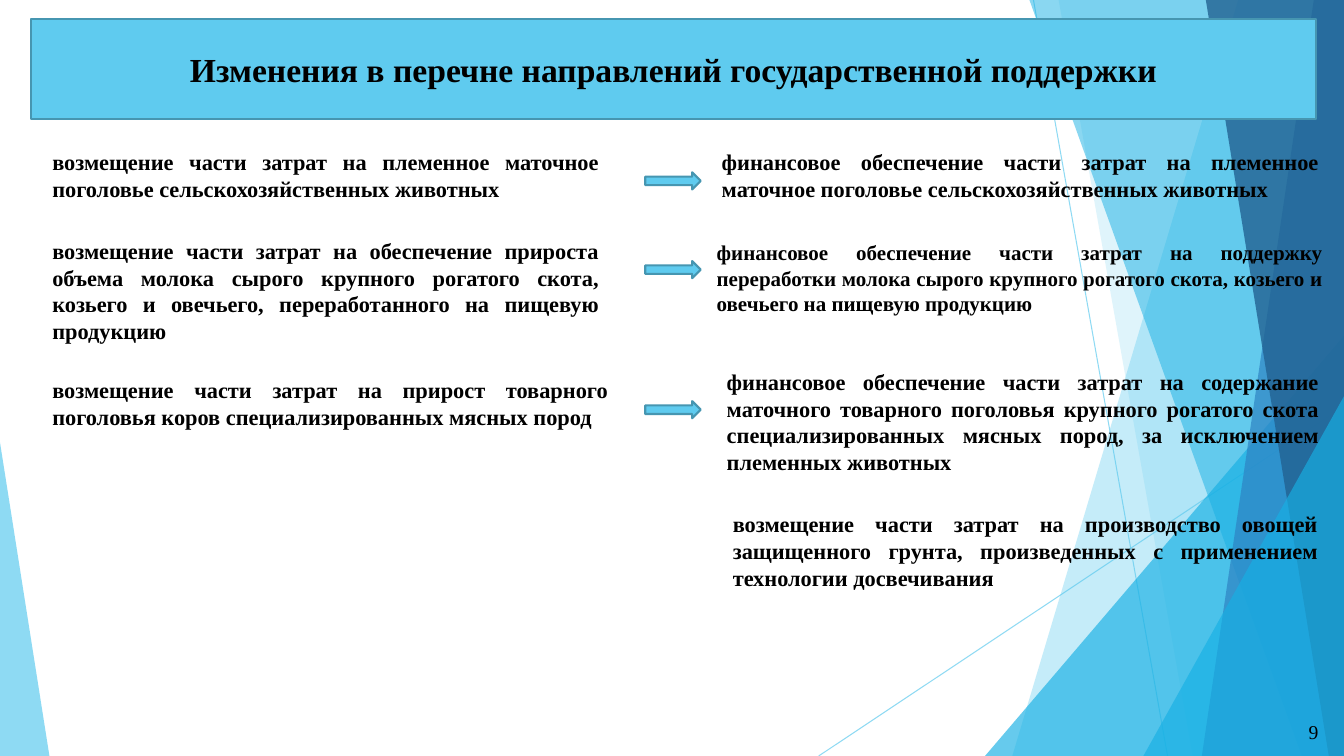
from lxml.etree import SubElement
from pptx import Presentation
from pptx.dml.color import RGBColor
from pptx.enum.shapes import MSO_CONNECTOR as CONN, MSO_SHAPE as SHAPE
from pptx.enum.text import MSO_ANCHOR as ANCHOR, PP_ALIGN as ALIGN
from pptx.oxml.ns import qn
from pptx.util import Pt

PX = 9144  # 100 px to the inch
W, H = 1333, 750
SKY, CYAN, BLUE, NAVY, EDGE = "5FCBEF", "17B0E4", "2E83C3", "226292", "4696B1"


def rgb(color):
    return RGBColor.from_string(color)


class SlideBuilder:
    font = "Times New Roman"
    ink = "000000"

    def __init__(self, slide):
        self.shapes = slide.shapes

    def set_alpha(self, sp_pr, percent):
        """Make the first solid fill under an element partly transparent."""
        color = sp_pr.find(".//" + qn("a:solidFill"))[0]
        SubElement(color, qn("a:alpha")).set("val", str(percent * 1000))

    def paint(self, sp, color, alpha=100, edge=None):
        sp.shadow.inherit = False
        sp.fill.solid()
        sp.fill.fore_color.rgb = rgb(color)
        if alpha < 100:
            self.set_alpha(sp._element.spPr, alpha)
        if edge:
            sp.line.color.rgb = rgb(edge)
            sp.line.width = Pt(1.5)
        else:
            sp.line.fill.background()

    def line(self, *ends):
        cx = self.shapes.add_connector(CONN.STRAIGHT, *(v * PX for v in ends))
        cx.line.color.rgb = rgb(SKY)
        cx.line.width = Pt(0.75)
        self.set_alpha(cx._element.spPr, 70)
        SubElement(cx._element.spPr, qn("a:effectLst"))

    def band(self, top, bottom, color, alpha):
        """Fill from a slanted edge, given by its x at top and bottom, to the right side."""
        fb = self.shapes.build_freeform(top, 0, scale=PX)
        fb.add_line_segments([(W, 0), (W, H), (bottom, H)], close=True)
        self.paint(fb.convert_to_shape(), color, alpha)

    def shape(self, kind, box, color, alpha=100, edge=None, adj=None):
        sp = self.shapes.add_shape(kind, *(v * PX for v in box))
        if adj is not None:
            sp.adjustments[0] = adj
        self.paint(sp, color, alpha, edge)
        return sp

    def set_text(self, sp, text, size, align, bold=True, wrap=True, anchor=ANCHOR.TOP):
        tf = sp.text_frame
        tf.word_wrap = wrap
        tf.vertical_anchor = anchor
        tf.text = text
        p = tf.paragraphs[0]
        p.alignment = align
        font = p.runs[0].font
        font.name, font.size, font.bold = self.font, Pt(size), bold
        font.color.rgb = rgb(self.ink)

    def text(self, box, text, size=16, align=ALIGN.JUSTIFY, **style):
        sp = self.shapes.add_textbox(*(v * PX for v in box))
        self.set_text(sp, text, size, align, **style)


def draw_backdrop(s):
    s.line(1025, 0, 1158, H)
    s.line(W, 403, 812, H)
    s.band(1228, 1004, SKY, 36)
    s.band(1050, 1183, SKY, 20)
    s.shape(SHAPE.ISOSCELES_TRIANGLE, (977, 333, 356, 417), CYAN, 66, adj=1)
    s.band(1021, 1291, CYAN, 50)
    s.band(1303, 1192, BLUE, 70)
    s.band(1196, 1318, NAVY, 80)
    s.shape(SHAPE.ISOSCELES_TRIANGLE, (1134, 393, 199, 357), CYAN, 66, adj=1)
    s.shape(SHAPE.ISOSCELES_TRIANGLE, (0, 439, 49, 311), SKY, 70, adj=0)


def main():
    prs = Presentation()
    prs.slide_width, prs.slide_height = W * PX, H * PX
    s = SlideBuilder(prs.slides.add_slide(prs.slide_layouts[6]))
    draw_backdrop(s)

    title = s.shape(SHAPE.RECTANGLE, (31, 19, 1274, 99), SKY, edge=EDGE)
    s.set_text(title, "Изменения в перечне направлений государственной поддержки",
               24, ALIGN.CENTER, anchor=ANCHOR.MIDDLE)

    before = [
        ((42, 142, 562, 88), "возмещение части затрат на племенное маточное "
         "поголовье сельскохозяйственных животных"),
        ((42, 230, 562, 113), "возмещение части затрат на обеспечение прироста "
         "объема молока сырого крупного рогатого скота, козьего и овечьего, "
         "переработанного на пищевую продукцию"),
        ((42, 368, 571, 62), "возмещение части затрат на прирост товарного "
         "поголовья коров специализированных мясных пород"),
    ]
    after = [
        ((706, 142, 612, 79), "финансовое обеспечение части затрат на племенное "
         "маточное поголовье сельскохозяйственных животных"),
        ((701, 233, 621, 85), "финансовое обеспечение части затрат на поддержку "
         "переработки молока сырого крупного рогатого скота, козьего и овечьего "
         "на пищевую продукцию", 15),
        ((711, 360, 607, 118), "финансовое обеспечение части затрат на содержание "
         "маточного товарного поголовья крупного рогатого скота "
         "специализированных мясных пород, за исключением племенных животных"),
        ((717, 501, 600, 91), "возмещение части затрат на производство овощей "
         "защищенного грунта, произведенных с применением технологии "
         "досвечивания"),
    ]
    for item in before + after:
        s.text(*item)
    for top in (171, 259, 398):
        s.shape(SHAPE.RIGHT_ARROW, (640, top, 55, 17), SKY, edge=EDGE)

    s.text((1288, 709, 30, 34), "9", 14, ALIGN.LEFT, bold=False, wrap=False)
    prs.save("out.pptx")


if __name__ == "__main__":
    main()
